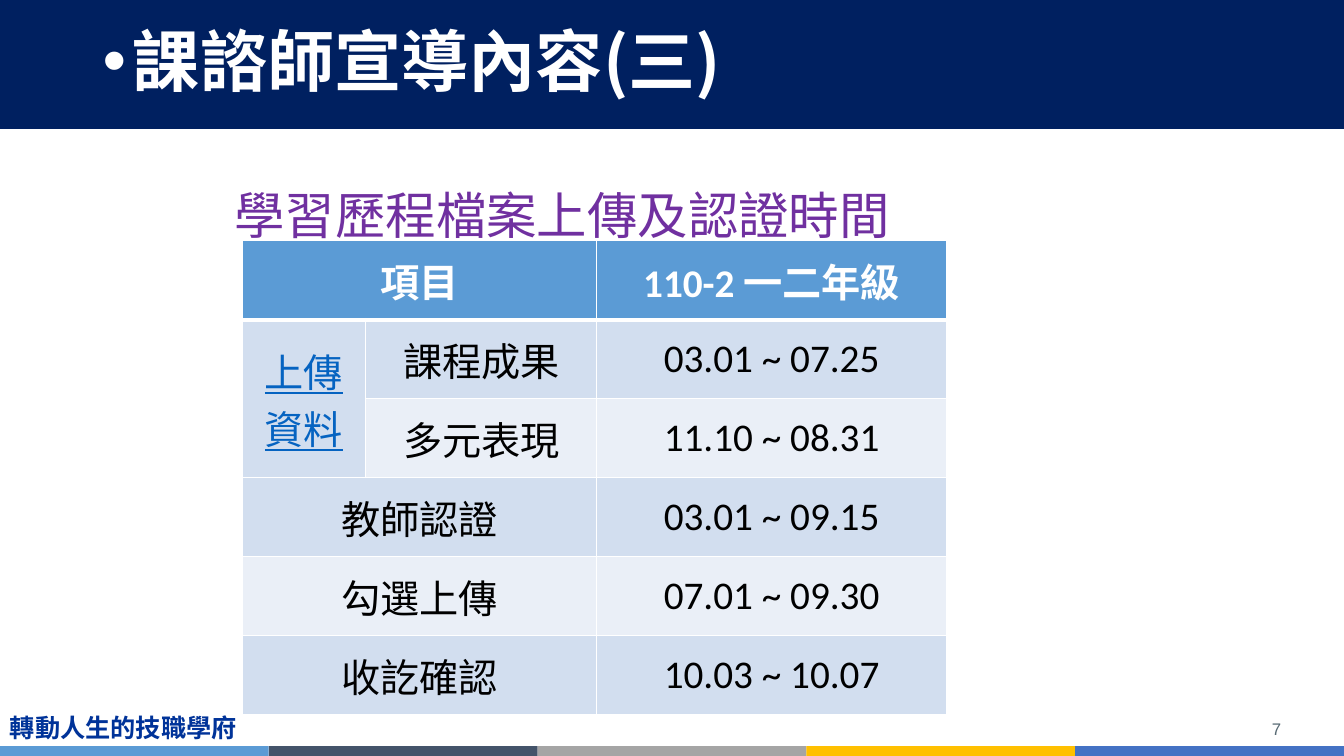
from lxml.etree import SubElement
from pptx import Presentation
from pptx.dml.color import RGBColor
from pptx.enum.shapes import MSO_SHAPE as SHAPE
from pptx.enum.text import MSO_ANCHOR as ANCHOR, PP_ALIGN as ALIGN
from pptx.oxml.ns import qn
from pptx.util import Cm, Pt

WHITE = RGBColor(0xFF, 0xFF, 0xFF)
BLACK = RGBColor(0x00, 0x00, 0x00)
NAVY = RGBColor(0x00, 0x20, 0x60)
ROYAL = RGBColor(0x00, 0x33, 0x99)
PURPLE = RGBColor(0x70, 0x30, 0xA0)
LINK = RGBColor(0x05, 0x63, 0xC1)
SLATE = RGBColor(0x57, 0x69, 0x73)
BLUE = RGBColor(0x5B, 0x9B, 0xD5)
BAND_DARK = RGBColor(0xD2, 0xDE, 0xEF)
BAND_LIGHT = RGBColor(0xEA, 0xEF, 0xF7)
STRIPES = [BLUE, RGBColor(0x44, 0x54, 0x6A), RGBColor(0xA5, 0xA5, 0xA5),
           RGBColor(0xFF, 0xC0, 0x00), RGBColor(0x44, 0x72, 0xC4)]
SC = "Noto Sans CJK SC"
TC = "Noto Sans CJK TC"
WIDTH, HEIGHT = 33.87, 19.05

ROWS = [
    ("項目", "", "110-2 一二年級"),
    ("上傳\n資料", "課程成果", "03.01 ~ 07.25"),
    ("", "多元表現", "11.10 ~ 08.31"),
    ("教師認證", "", "03.01 ~ 09.15"),
    ("勾選上傳", "", "07.01 ~ 09.30"),
    ("收訖確認", "", "10.03 ~ 10.07"),
]
MERGES = [(0, 0, 0, 1), (1, 0, 2, 0), (3, 0, 3, 1), (4, 0, 4, 1), (5, 0, 5, 1)]


def add_bullet(p, color):
    pPr = p._p.get_or_add_pPr()
    pPr.set("marL", str(Cm(0.76)))
    pPr.set("indent", str(Cm(-0.84)))
    clr = SubElement(pPr, qn("a:buClr"))
    SubElement(clr, qn("a:srgbClr"), val=str(color))
    SubElement(pPr, qn("a:buFont"), typeface="Arial")
    SubElement(pPr, qn("a:buChar"), char="•")


def write(tf, text, size=28, color=BLACK, font="Calibri", east=SC, bold=False,
          underline=False, align=ALIGN.LEFT, spacing=None, bullet=False):
    for i, line in enumerate(text.split("\n")):
        p = tf.add_paragraph() if i else tf.paragraphs[0]
        if bullet:
            add_bullet(p, color)
        p.alignment = align
        p.line_spacing = spacing
        r = p.add_run()
        r.text = line
        r.font.size = Pt(size)
        r.font.bold = bold
        r.font.underline = underline
        r.font.color.rgb = color
        r.font.name = font
        SubElement(r._r.get_or_add_rPr(), qn("a:ea"), typeface=east)


def add_label(s, text, left, top, width, height, anchor=ANCHOR.TOP, wrap=True, **fmt):
    tf = s.shapes.add_textbox(Cm(left), Cm(top), Cm(width), Cm(height)).text_frame
    tf.word_wrap = wrap
    tf.vertical_anchor = anchor
    write(tf, text, **fmt)


def add_bar(s, left, top, width, height, color):
    sp = s.shapes.add_shape(SHAPE.RECTANGLE, Cm(left), Cm(top), Cm(width), Cm(height))
    sp.shadow.inherit = False
    sp.fill.solid()
    sp.fill.fore_color.rgb = color
    sp.line.fill.background()


def set_borders(cell, top, bottom):
    tcPr = cell._tc.get_or_add_tcPr()
    for side, width in (("L", 1), ("R", 1), ("T", top), ("B", bottom)):
        ln = SubElement(tcPr, qn(f"a:ln{side}"), w=str(Pt(width)))
        fill = SubElement(ln, qn("a:solidFill"))
        SubElement(fill, qn("a:srgbClr"), val=str(WHITE))


def add_schedule(s, left, top, widths, row_height):
    height = row_height * len(ROWS)
    table = s.shapes.add_table(len(ROWS), len(widths), Cm(left), Cm(top),
                               Cm(sum(widths)), Cm(height)).table
    for column, width in zip(table.columns, widths):
        column.width = Cm(width)
    for merge in MERGES:
        table.cell(*merge[:2]).merge(table.cell(*merge[2:]))
    for i, values in enumerate(ROWS):
        header = i == 0
        table.rows[i].height = Cm(row_height)
        for j, text in enumerate(values):
            cell = table.cell(i, j)
            cell.vertical_anchor = ANCHOR.MIDDLE
            set_borders(cell, 3 if i == 1 else 1, 3 if header else 1)
            cell.fill.solid()
            cell.fill.fore_color.rgb = BLUE if header else BAND_DARK if i % 2 else BAND_LIGHT
            if text:
                linked = (i, j) == (1, 0)
                color = WHITE if header else LINK if linked else BLACK
                write(cell.text_frame, text, color=color, bold=header,
                      underline=linked, align=ALIGN.CENTER)


def main():
    prs = Presentation()
    prs.slide_width, prs.slide_height = Cm(WIDTH), Cm(HEIGHT)
    s = prs.slides.add_slide(prs.slide_layouts[6])
    add_bar(s, 0, -0.03, WIDTH, 3.28, NAVY)
    stripe = WIDTH / len(STRIPES)
    for i, color in enumerate(STRIPES):
        add_bar(s, i * stripe, 18.8, stripe, 0.25, color)
    add_label(s, "轉動人生的技職學府", 0, 17.83, 6.27, 1.02, wrap=False,
              size=18, color=ROYAL, font="Arial", bold=True)
    add_label(s, "課諮師宣導內容(三)", 2.34, 0.69, 29.21, 1.88, anchor=ANCHOR.MIDDLE,
              size=48, color=WHITE, font=TC, east=TC, bold=True, spacing=0.9, bullet=True)
    add_label(s, "7", 24.92, 17.96, 7.62, 0.79, anchor=ANCHOR.MIDDLE,
              size=12, color=SLATE, font="Arial", align=ALIGN.RIGHT)
    add_label(s, "學習歷程檔案上傳及認證時間", 5.66, 4.52, 20.02, 1.8,
              size=36, color=PURPLE, font=SC)
    add_schedule(s, 6.1, 6.07, [3.12, 5.82, 8.81], 1.99)
    prs.save("out.pptx")


if __name__ == "__main__":
    main()
